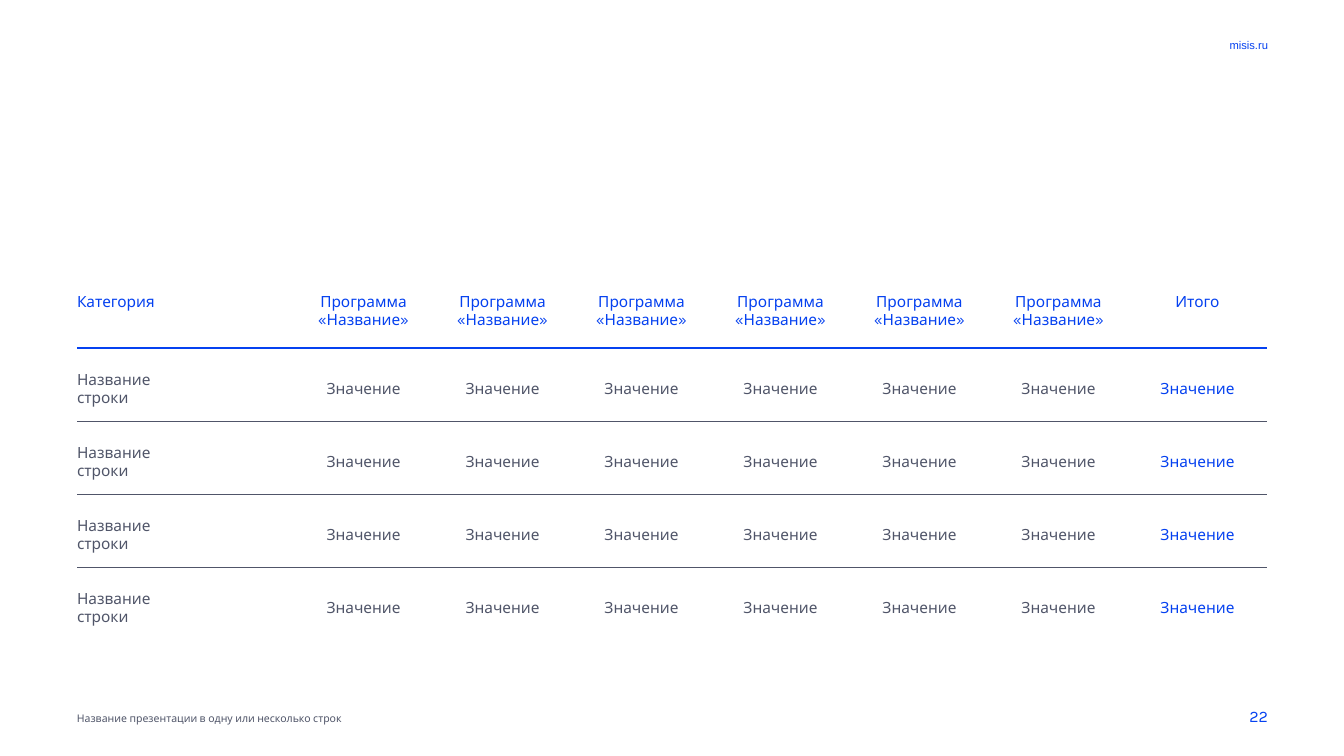
from lxml import etree
from pptx import Presentation, util as u
from pptx.dml.color import RGBColor
from pptx.enum import text
from pptx.oxml.ns import qn

PX = 18143
BLUE = RGBColor(0x05, 0x41, 0xF0)
GREY = RGBColor(0x50, 0x55, 0x69)
WHITE = RGBColor(0xFF, 0xFF, 0xFF)
LEFT, CENTER, RIGHT = text.PP_ALIGN.LEFT, text.PP_ALIGN.CENTER, text.PP_ALIGN.RIGHT
TOP, MIDDLE = text.MSO_ANCHOR.TOP, text.MSO_ANCHOR.MIDDLE
NO_STYLE = "{2D5ABB26-0587-4C30-8999-92F81FD0307C}"

PROGRAMS = 6
HEADER = ["Категория"] + ["Программа\n«Название»"] * PROGRAMS + ["Итого"]
ROW = ["Название\nстроки"] + ["Значение"] * (PROGRAMS + 1)
ROWS = [HEADER] + [ROW] * 4
COLUMN_WIDTHS = [217] + [139] * (PROGRAMS + 1)
ROW_HEIGHTS = [60] + [73] * 4

LABELS = [
    ("misis.ru", (1092, 36, 181, 19), "Arial", 16, BLUE, RIGHT, TOP),
    ("Название презентации в одну или несколько строк", (72, 698, 383, 40),
     "Karla", 15, GREY, LEFT, MIDDLE),
    ("22", (1092, 696, 181, 40), "Karla", 23, BLUE, RIGHT, MIDDLE),
]


def style_text(frame, font, size, color, align):
    for para in frame.paragraphs:
        para.alignment = align
        for span in para.runs:
            span.font.name = font
            span.font.size = u.Pt(size)
            span.font.color.rgb = color


def add_label(page, words, place, font, size, color, align, anchor):
    box = page.shapes.add_textbox(*(n * PX for n in place))
    frame = box.text_frame
    frame.word_wrap = True
    frame.vertical_anchor = anchor
    frame.text = words
    style_text(frame, font, size, color, align)


def set_borders(cell, borders):
    props = cell._tc.get_or_add_tcPr()
    for place, (side, color, width) in enumerate(borders):
        line = etree.Element(qn("a:ln" + side), w=str(u.Pt(width)))
        fill = etree.SubElement(line, qn("a:solidFill"))
        etree.SubElement(fill, qn("a:srgbClr"), val=str(color))
        props.insert(place, line)


def cell_borders(row, column):
    rules = [(BLUE, 2.25)] + [(GREY, 1)] * (len(ROWS) - 2)
    borders = []
    if column > 0:
        borders.append(("L", WHITE, 0.75))
    if column < len(HEADER) - 1:
        borders.append(("R", WHITE, 0.75))
    if row > 0:
        borders.append(("T", *rules[row - 1]))
    if row < len(rules):
        borders.append(("B", *rules[row]))
    return borders


def fill_cell(cell, words, row, column):
    is_header, is_total = row == 0, column == len(HEADER) - 1
    cell.text = words
    cell.margin_left = 0 if column == 0 else 4 * PX
    cell.margin_right = 4 * PX
    cell.margin_top = (5 if is_header else 12) * PX
    cell.margin_bottom = 2 * PX
    cell.vertical_anchor = TOP if is_header else MIDDLE
    style_text(cell.text_frame, "Karla", 22, BLUE if is_header or is_total else GREY,
               LEFT if column == 0 else CENTER)
    cell.fill.background()
    set_borders(cell, cell_borders(row, column))


def add_program_table(page):
    graphic = page.shapes.add_table(len(ROWS), len(HEADER), 77 * PX, 288 * PX,
                                    sum(COLUMN_WIDTHS) * PX, sum(ROW_HEIGHTS) * PX)
    table = graphic.table
    table.horz_banding = False
    table._tbl.tblPr.find(qn("a:tableStyleId")).text = NO_STYLE
    for column, width in zip(table.columns, COLUMN_WIDTHS):
        column.width = width * PX
    for row, height in zip(table.rows, ROW_HEIGHTS):
        row.height = height * PX
    for r, values in enumerate(ROWS):
        for c, words in enumerate(values):
            fill_cell(table.cell(r, c), words, r, c)


def main():
    deck = Presentation()
    deck.slide_width, deck.slide_height = 1344 * PX, 756 * PX
    page = deck.slides.add_slide(deck.slide_layouts[6])
    add_program_table(page)
    for label in LABELS:
        add_label(page, *label)
    deck.save("out.pptx")


if __name__ == "__main__":
    main()
